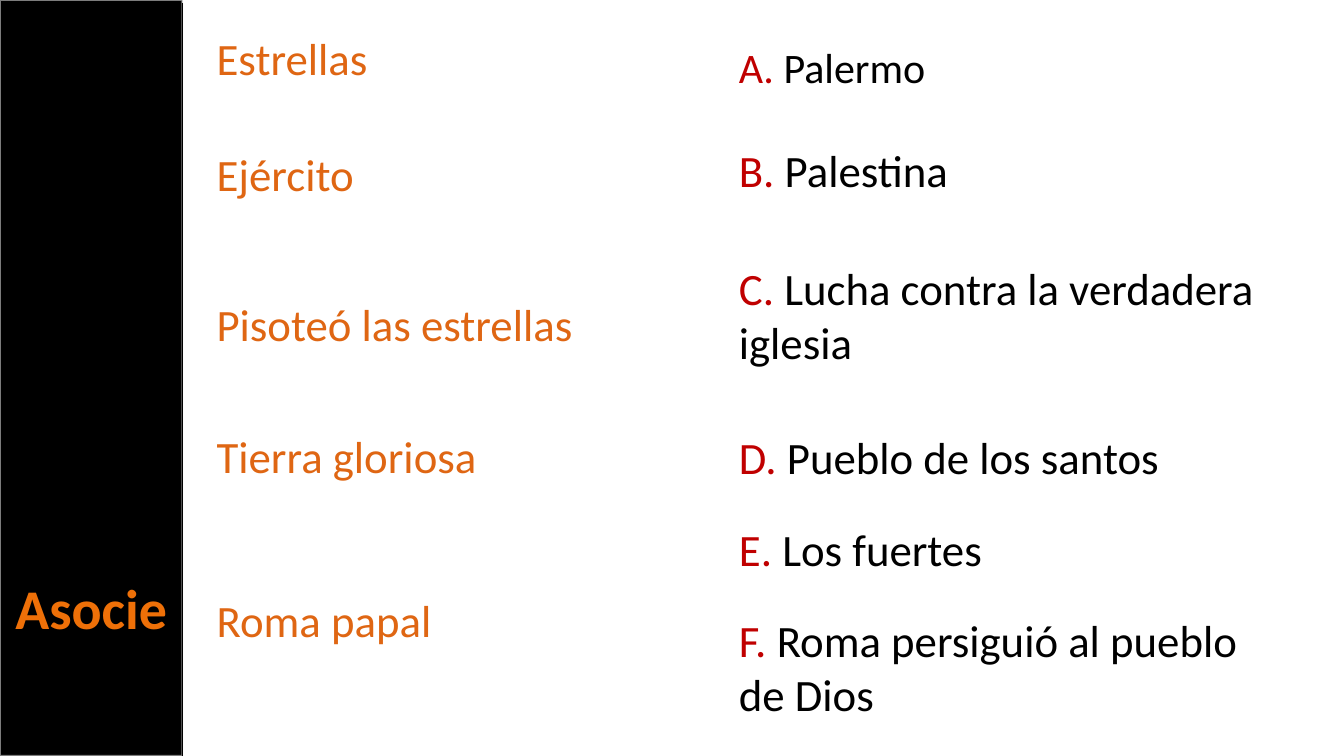
from dataclasses import dataclass

from lxml import etree
from pptx import Presentation
from pptx import util as u
from pptx.dml.color import RGBColor
from pptx.enum import shapes, text
from pptx.oxml.ns import qn

PX = 9144  # EMU per px, 100 px to the inch
SLIDE_W, SLIDE_H = 1333, 750
BAR_W = 181
TERM_X, MATCH_X = 205, 723

BLACK = RGBColor(0x00, 0x00, 0x00)
EDGE = RGBColor(0xF9, 0xF9, 0xF9)
TITLE_ORANGE = RGBColor(0xEE, 0x70, 0x08)
TERM_ORANGE = RGBColor(0xDF, 0x66, 0x13)
LETTER_RED = RGBColor(0xC0, 0x00, 0x00)


@dataclass(frozen=True)
class Entry:
    wording: str
    top: int
    width: int
    height: int = 64
    size: int = 32


TERMS = [
    Entry("Estrellas", 26, 459),
    Entry("Ejército", 141, 384),
    Entry("Pisoteó las estrellas", 289, 413),
    Entry("Tierra gloriosa", 420, 439),
    Entry("Roma papal", 583, 459),
]
MATCHES = [
    Entry("Palermo", 36, 418, 61, 30),
    Entry("Palestina", 137, 453),
    Entry("Lucha contra la verdadera iglesia", 254, 602, 118),
    Entry("Pueblo de los santos", 421, 500),
    Entry("Los fuertes", 513, 559),
    Entry("Roma persiguió al pueblo de Dios", 603, 559, 118),
]


def px(*lengths: int) -> list[u.Emu]:
    return [u.Emu(length * PX) for length in lengths]


def add_run(p, wording: str, color: RGBColor, size: int, bold: bool = False) -> None:
    r = p.add_run()
    r.text = wording
    font_format = {"name": "Calibri", "size": u.Pt(size), "bold": bold}
    for name, value in font_format.items():
        setattr(r.font, name, value)
    r.font.color.rgb = color


def format_frame(tf) -> None:
    """Wrap the text from the top and fit the box to it."""
    frame_format = {
        "word_wrap": True,
        "auto_size": text.MSO_AUTO_SIZE.SHAPE_TO_FIT_TEXT,
        "vertical_anchor": text.MSO_ANCHOR.TOP,
    }
    for name, value in frame_format.items():
        setattr(tf, name, value)


def add_entry(slide, entry: Entry, left: int, runs: list[tuple[str, RGBColor]]) -> None:
    box = slide.shapes.add_textbox(*px(left, entry.top, entry.width, entry.height))
    format_frame(box.text_frame)
    for wording, color in runs:
        add_run(box.text_frame.paragraphs[0], wording, color, entry.size)


def add_bar(slide):
    bar = slide.shapes.add_shape(
        shapes.MSO_SHAPE.RECTANGLE, *px(0, 0, BAR_W, SLIDE_H))
    bar.shadow.inherit = False
    bar.fill.solid()
    bar.fill.fore_color.rgb = BLACK
    bar.line.color.rgb = EDGE
    bar.line.width = u.Pt(1.35)
    edge_color = bar.line.fill._xPr.find(".//" + qn("a:srgbClr"))
    etree.SubElement(edge_color, qn("a:alpha"), val="50000")
    return bar


def place_title(slide, bar) -> None:
    """Put the title on the bar, in front of it."""
    title = slide.shapes.title
    title.element.addprevious(bar.element)
    title.left, title.top, title.width, title.height = px(0, 564, BAR_W, 77)
    format_frame(title.text_frame)
    p = title.text_frame.paragraphs[0]
    p.alignment = text.PP_ALIGN.CENTER
    add_run(p, "Asocie", TITLE_ORANGE, 40, bold=True)


def add_divider(slide) -> None:
    divider = slide.shapes.add_connector(
        shapes.MSO_CONNECTOR.STRAIGHT, *px(BAR_W, 3, BAR_W, SLIDE_H))
    divider.line.color.rgb = BLACK
    divider.line.width = u.Pt(0.85)
    etree.SubElement(divider.element.spPr, qn("a:effectLst"))


def main() -> None:
    prs = Presentation()
    prs.slide_width, prs.slide_height = px(SLIDE_W, SLIDE_H)
    slide = prs.slides.add_slide(prs.slide_layouts.get_by_name("Title Only"))

    place_title(slide, add_bar(slide))
    for term in TERMS:
        add_entry(slide, term, TERM_X, [(term.wording, TERM_ORANGE)])
    for letter, match in zip("ABCDEF", MATCHES):
        add_entry(slide, match, MATCH_X,
                  [(f"{letter}. ", LETTER_RED), (match.wording, BLACK)])
    add_divider(slide)

    prs.save("out.pptx")


if __name__ == "__main__":
    main()
